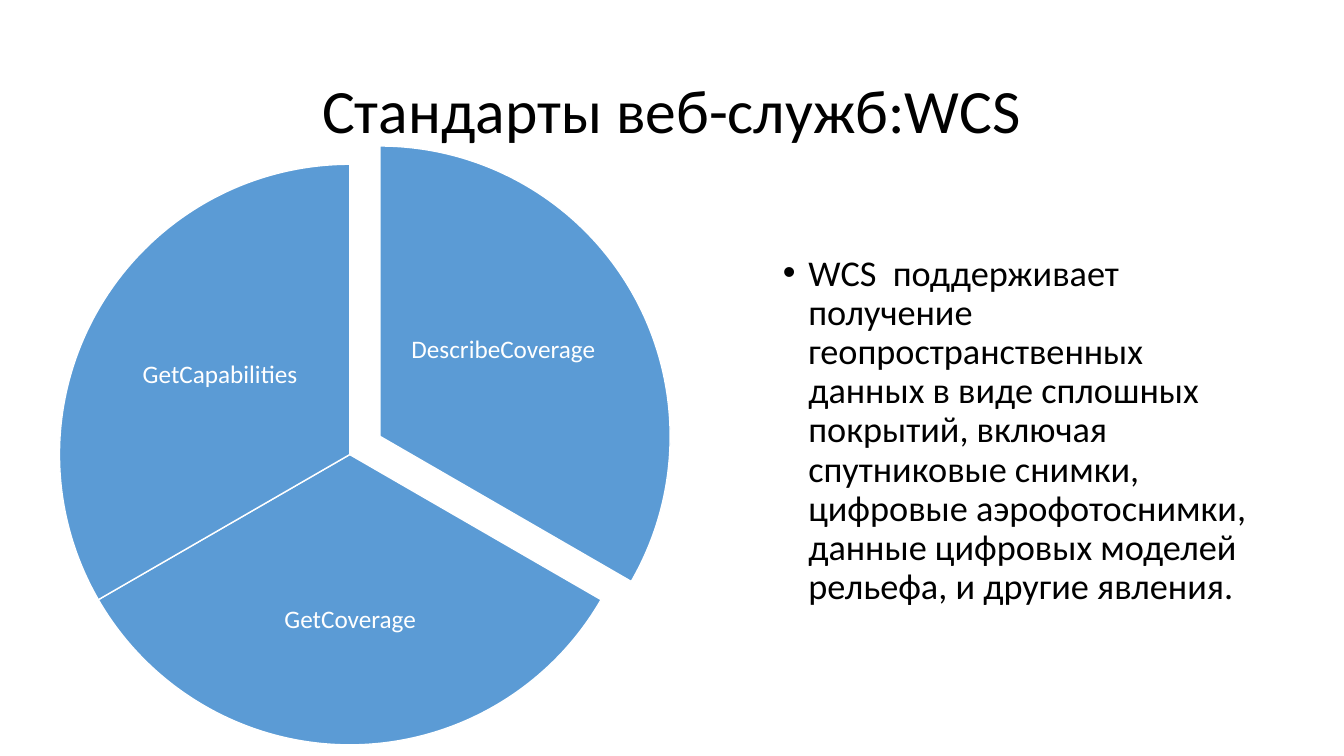
from dataclasses import dataclass

from lxml import etree
from pptx import Presentation
from pptx import util as u
from pptx.dml.color import RGBColor
from pptx.enum import shapes, text
from pptx.oxml.ns import qn

HUES = {"ink": "000000", "slice": "5B9BD5", "white": "FFFFFF"}
FONT = "Calibri"
SIZE = 14.63  # pie diameter, cm
SWEEP = 72  # a third of a turn, in adjustment units
TURN = 216


@dataclass
class Slice:
    name: str
    left: float
    top: float
    start: int
    label: tuple[float, float, float, float]


SLICES = [
    Slice("DescribeCoverage", 2.26, 3.68, 162, (10.21, 6.4, 4.95, 4.88)),
    Slice("GetCoverage", 1.5, 4.14, 18, (5.51, 13.36, 6.63, 4.52)),
    Slice("GetCapabilities", 1.5, 4.14, 90, (3.07, 7.01, 4.95, 4.88)),
]


def tint(hue: str) -> RGBColor:
    return RGBColor.from_string(HUES[hue])


def write(frame, words: str, size: float, hue: str, align, anchor):
    """Fill a text frame with one styled paragraph and return it."""
    frame.text = words
    frame.word_wrap = True
    frame.auto_size = text.MSO_AUTO_SIZE.NONE
    frame.vertical_anchor = anchor
    para = frame.paragraphs[0]
    para.alignment = align
    para.line_spacing = 0.9
    font = para.runs[0].font
    font.name, font.size = FONT, u.Pt(size)
    font.color.rgb = tint(hue)
    return para


def add_slice(slide, part: Slice) -> None:
    pie = slide.shapes.add_shape(
        shapes.MSO_SHAPE.PIE, u.Cm(part.left), u.Cm(part.top), u.Cm(SIZE), u.Cm(SIZE))
    pie.adjustments[0] = part.start
    pie.adjustments[1] = (part.start + SWEEP) % TURN
    pie.shadow.inherit = False
    pie.fill.solid()
    pie.fill.fore_color.rgb = tint("slice")
    pie.line.color.rgb = tint("white")
    pie.line.width = u.Pt(1)

    frame = slide.shapes.add_textbox(*map(u.Cm, part.label)).text_frame
    frame.margin_left = frame.margin_right = u.Cm(0.08)
    frame.margin_top = frame.margin_bottom = u.Cm(0.08)
    write(frame, part.name, 18, "white", text.PP_ALIGN.CENTER, text.MSO_ANCHOR.MIDDLE)


def add_bullet(para) -> None:
    props = para._p.get_or_add_pPr()
    props.set("marL", str(u.Cm(0.64)))
    props.set("indent", str(-u.Cm(0.64)))
    etree.SubElement(props, qn("a:buFont")).set("typeface", "Arial")
    etree.SubElement(props, qn("a:buChar")).set("char", "•")


def main() -> None:
    deck = Presentation()
    deck.slide_width, deck.slide_height = u.Cm(33.87), u.Cm(19.05)
    slide = deck.slides.add_slide(deck.slide_layouts[5])

    # Title
    title = slide.shapes.title
    title.left, title.top = u.Cm(2.33), u.Cm(1.01)
    title.width, title.height = u.Cm(29.21), u.Cm(3.68)
    write(title.text_frame, "Стандарты веб-служб:WСS", 44, "ink",
          text.PP_ALIGN.CENTER, text.MSO_ANCHOR.MIDDLE)

    # Description
    body = slide.shapes.add_textbox(u.Cm(19.48), u.Cm(6.3), u.Cm(12.24), u.Cm(10.08))
    para = write(
        body.text_frame,
        "WСS  поддерживает получение геопространственных данных в виде "
        "сплошных покрытий, включая спутниковые снимки, цифровые "
        "аэрофотоснимки, данные цифровых моделей рельефа, и другие явления.",
        25.9, "ink", text.PP_ALIGN.LEFT, text.MSO_ANCHOR.TOP)
    para.space_before = u.Pt(10)
    add_bullet(para)

    # Pie of operations
    for part in SLICES:
        add_slice(slide, part)

    deck.save("out.pptx")


if __name__ == "__main__":
    main()
